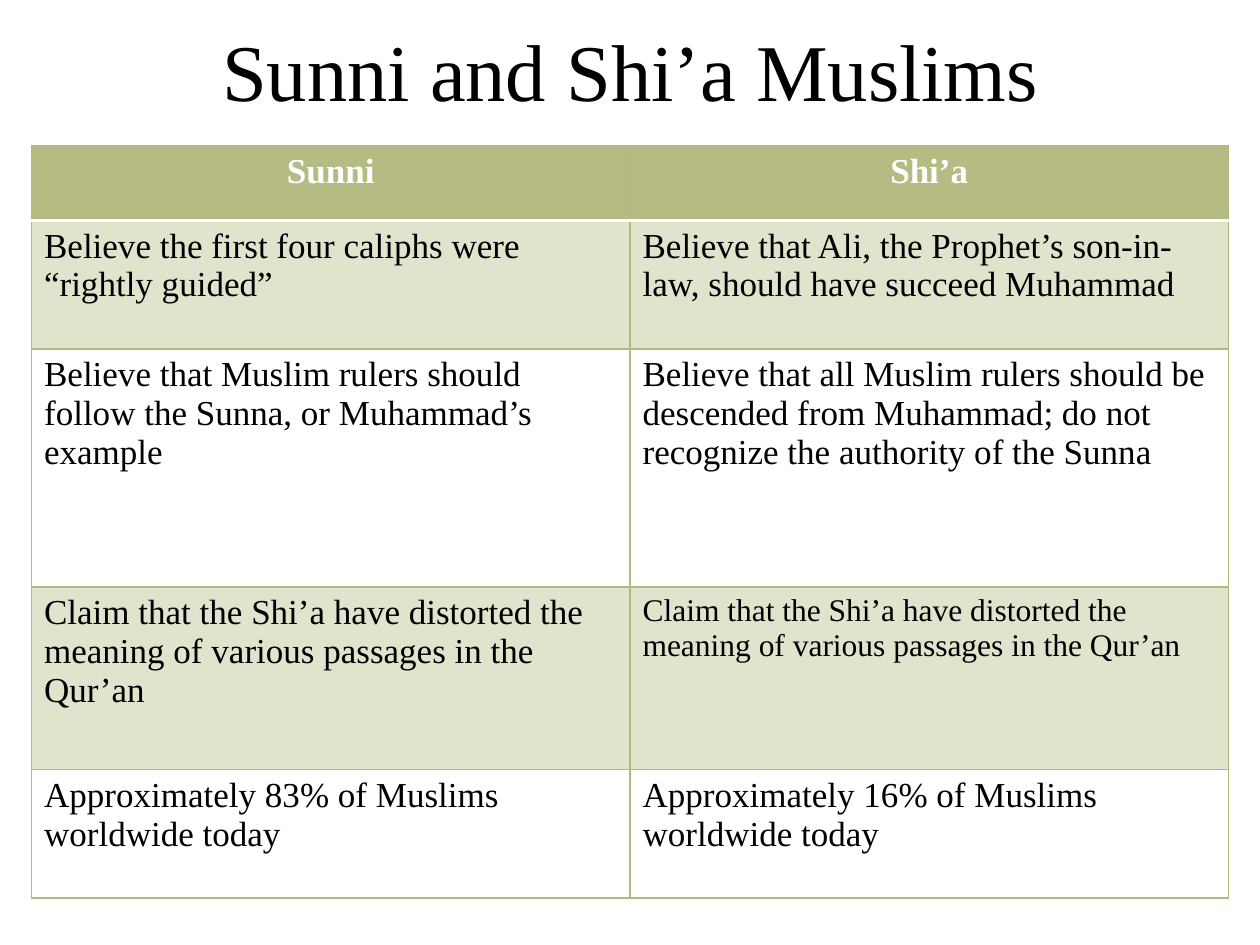
from lxml.etree import SubElement
from pptx import Presentation
from pptx.dml.color import RGBColor
from pptx.enum.text import MSO_ANCHOR, MSO_AUTO_SIZE, PP_ALIGN
from pptx.oxml.ns import qn
from pptx.util import Inches, Pt

FONT = "Times New Roman"
COLORS = {"text": "000000", "header_text": "FFFFFF", "header": "B5BB83",
          "border": "B2B87F", "header_rule": "FFFFFF"}
BAND_OPACITY = 40
DISTORTION_CLAIM = ("Claim that the Shi’a have distorted the meaning of "
                    "various passages in the Qur’an")
BELIEFS = [
    ("Sunni", "Shi’a"),
    ("Believe the first four caliphs were “rightly guided”",
     "Believe that Ali, the Prophet’s son-in-law, should have succeed Muhammad"),
    ("Believe that Muslim rulers should follow the Sunna, or Muhammad’s example",
     "Believe that all Muslim rulers should be descended from Muhammad; "
     "do not recognize the authority of the Sunna"),
    (DISTORTION_CLAIM, DISTORTION_CLAIM),
    ("Approximately 83% of Muslims worldwide today",
     "Approximately 16% of Muslims worldwide today"),
]
ROW_HEIGHTS = [0.59, 1.02, 1.89, 1.45, 1.02]
SMALL_CELL = (3, 1)


def style_paragraph(paragraph, size, color, bold=False):
    font = paragraph.font
    font.name, font.size, font.bold = FONT, Pt(size), bold
    font.color.rgb = RGBColor.from_string(COLORS[color])


def add_title(slide, text, left, top, width, height):
    title = slide.shapes.title
    title.left, title.top, title.width, title.height = left, top, width, height
    frame = title.text_frame
    frame.text = text
    frame.auto_size = MSO_AUTO_SIZE.NONE
    frame.vertical_anchor = MSO_ANCHOR.MIDDLE
    frame.paragraphs[0].alignment = PP_ALIGN.CENTER
    style_paragraph(frame.paragraphs[0], 46, "text")


def set_border(cell, side, color, width):
    line = SubElement(cell._tc.get_or_add_tcPr(), qn(f"a:ln{side}"), w=str(Pt(width)))
    fill = SubElement(line, qn("a:solidFill"))
    SubElement(fill, qn("a:srgbClr"), val=COLORS[color])


def set_borders(cell, row):
    """Draw the four edges; the rule under the header is white and thicker."""
    for side in "LRTB":
        under_header = (row, side) in ((0, "B"), (1, "T"))
        set_border(cell, side, *(("header_rule", 1.5) if under_header else ("border", 1)))


def set_fill(cell, row):
    """Fill the header solid and odd rows with a translucent band."""
    if row and row % 2 == 0:
        cell.fill.background()
        return
    cell.fill.solid()
    cell.fill.fore_color.rgb = RGBColor.from_string(COLORS["header"])
    if row:
        color = cell._tc.tcPr.find(f"{qn('a:solidFill')}/{qn('a:srgbClr')}")
        SubElement(color, qn("a:alpha"), val=str(BAND_OPACITY * 1000))


def add_beliefs_table(slide, left, top, width, height):
    table = slide.shapes.add_table(len(BELIEFS), 2, left, top, width, height).table
    for column in table.columns:
        column.width = width // 2
    for row, (beliefs, row_height) in enumerate(zip(BELIEFS, ROW_HEIGHTS)):
        table.rows[row].height = Inches(row_height)
        for column, belief in enumerate(beliefs):
            cell = table.cell(row, column)
            cell.text = belief
            paragraph = cell.text_frame.paragraphs[0]
            if row == 0:
                paragraph.alignment = PP_ALIGN.CENTER
            size = 18 if (row, column) == SMALL_CELL else 20
            style_paragraph(paragraph, size, "text" if row else "header_text", row == 0)
            # The schema wants borders ahead of the fill.
            set_borders(cell, row)
            set_fill(cell, row)


def main():
    presentation = Presentation()
    presentation.slide_width, presentation.slide_height = Inches(10), Inches(7.5)
    slide = presentation.slides.add_slide(presentation.slide_layouts[5])
    add_title(slide, "Sunni and Shi’a Muslims",
              Inches(1), Inches(0.15), Inches(8), Inches(0.8))
    add_beliefs_table(slide, Inches(0.25), Inches(1.16),
                      Inches(9.5), Inches(sum(ROW_HEIGHTS)))
    presentation.save("out.pptx")


if __name__ == "__main__":
    main()
